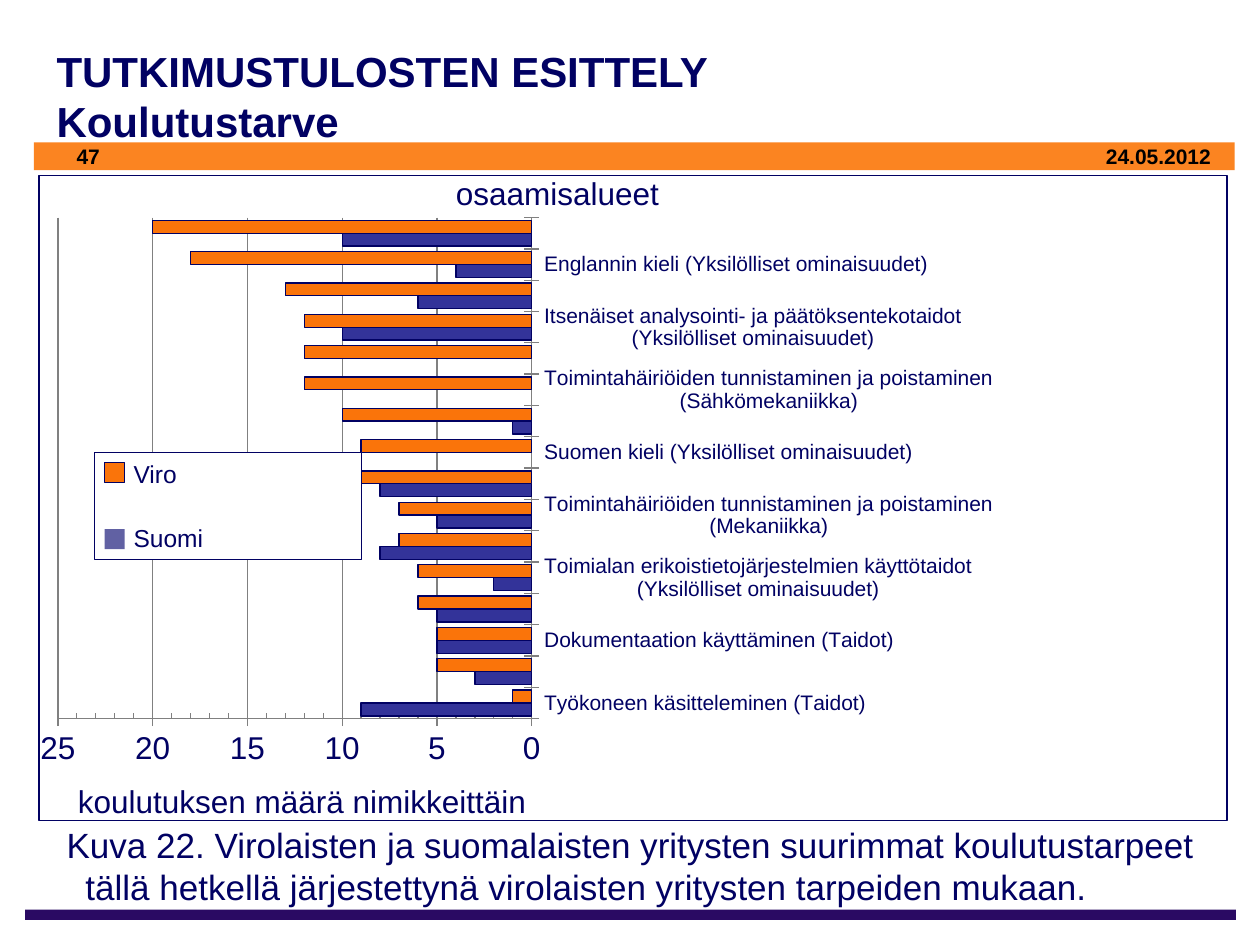
from dataclasses import dataclass
from lxml.etree import SubElement
from pptx import Presentation
from pptx.chart.data import CategoryChartData
from pptx.dml.color import RGBColor
from pptx.enum.chart import XL_CHART_TYPE, XL_TICK_MARK
from pptx.enum.shapes import MSO_SHAPE
from pptx.enum.text import MSO_ANCHOR, PP_ALIGN
from pptx.oxml.ns import qn
from pptx.util import Inches, Pt


@dataclass(frozen=True)
class Theme:
    font: str = "Arial"
    navy: RGBColor = RGBColor(0x01, 0x01, 0x63)
    purple: RGBColor = RGBColor(0x2A, 0x0A, 0x63)
    band: RGBColor = RGBColor(0xFB, 0x84, 0x21)
    orange: RGBColor = RGBColor(0xFA, 0x74, 0x0A)
    blue: RGBColor = RGBColor(0x33, 0x33, 0x99)
    lilac: RGBColor = RGBColor(0x61, 0x61, 0xA3)
    grey: RGBColor = RGBColor(0x80, 0x80, 0x80)
    white: RGBColor = RGBColor(0xFF, 0xFF, 0xFF)
    black: RGBColor = RGBColor(0, 0, 0)
    title: int = 24
    caption: int = 20
    axis: int = 18
    legend: int = 14
    small: int = 12
    line: float = 0.75


T = Theme()

NEEDS = [
    ("Työkoneen käsitteleminen (Taidot)", 9, 1),
    ("", 3, 5),
    ("Dokumentaation käyttäminen (Taidot)", 5, 5),
    ("", 5, 6),
    ("Toimialan erikoistietojärjestelmien käyttötaidot (Yksilölliset ominaisuudet)", 2, 6),
    ("", 8, 7),
    ("Toimintahäiriöiden tunnistaminen ja poistaminen (Mekaniikka)", 5, 7),
    ("", 8, 9),
    ("Suomen kieli (Yksilölliset ominaisuudet)", None, 9),
    ("", 1, 10),
    ("Toimintahäiriöiden tunnistaminen ja poistaminen (Sähkömekaniikka)", None, 12),
    ("", None, 12),
    ("Itsenäiset analysointi- ja päätöksentekotaidot (Yksilölliset ominaisuudet)", 10, 12),
    ("", 6, 13),
    ("Englannin kieli (Yksilölliset ominaisuudet)", 4, 18),
    ("", 10, 20),
]


def add_rect(s, x, y, w, h, fill=None, line=None):
    sp = s.shapes.add_shape(MSO_SHAPE.RECTANGLE, Inches(x), Inches(y), Inches(w), Inches(h))
    sp.shadow.inherit = False
    if fill is None:
        sp.fill.background()
    else:
        sp.fill.solid()
        sp.fill.fore_color.rgb = fill
    if line is None:
        sp.line.fill.background()
    else:
        sp.line.color.rgb = line
        sp.line.width = Pt(T.line)
    return sp


def style_text(p, size, color=T.navy, bold=False):
    p.font.name = T.font
    p.font.size = Pt(size)
    p.font.bold = bold
    p.font.color.rgb = color


def add_text(s, x, y, w, h, text, size, color=T.navy, bold=False,
             anchor=MSO_ANCHOR.TOP, align=PP_ALIGN.LEFT, hang=0):
    tf = s.shapes.add_textbox(Inches(x), Inches(y), Inches(w), Inches(h)).text_frame
    tf.word_wrap = True
    tf.vertical_anchor = anchor
    p = tf.paragraphs[0]
    p.text = text
    p.alignment = align
    if hang:
        pPr = p._p.get_or_add_pPr()
        pPr.set("marL", str(Inches(hang)))
        pPr.set("indent", str(-Inches(hang)))
    style_text(p, size, color, bold)


def add_header(s, x, y, w, h):
    add_rect(s, x, y + 0.92, w, 0.22, T.band)
    add_text(s, x + 0.08, y, w - 0.08, h, "TUTKIMUSTULOSTEN ESITTELY\vKoulutustarve",
             T.title, bold=True, anchor=MSO_ANCHOR.MIDDLE)
    add_text(s, x + 0.24, y + 0.88, 2.33, 0.3, "47", T.small, T.black, True)
    add_text(s, x + w - 1.29, y + 0.88, 1.2, 0.3, "24.05.2012", T.small, T.black, True,
             align=PP_ALIGN.RIGHT)


def set_plot_area(chart, x, y, w, h):
    area = chart._chartSpace.chart.plotArea
    layout = area.find(qn("c:layout"))
    if layout is None:
        layout = SubElement(area, qn("c:layout"))
        area.insert(0, layout)
    manual = SubElement(layout, qn("c:manualLayout"))
    for tag, val in (("layoutTarget", "inner"), ("xMode", "edge"), ("yMode", "edge"),
                     ("x", x), ("y", y), ("w", w), ("h", h)):
        SubElement(manual, qn(f"c:{tag}")).set("val", str(val))


def style_axis(axis, size):
    axis.major_tick_mark = XL_TICK_MARK.CROSS
    axis.format.line.color.rgb = T.grey
    axis.tick_labels.font.size = Pt(size)
    axis.tick_labels.font.color.rgb = T.navy


def add_needs_chart(s, x, y, w, h):
    names, suomi, viro = zip(*NEEDS)
    data = CategoryChartData()
    data.categories = names
    data.add_series("Suomi", suomi)
    data.add_series("Viro", viro)
    chart = s.shapes.add_chart(XL_CHART_TYPE.BAR_CLUSTERED, Inches(x), Inches(y),
                               Inches(w), Inches(h), data).chart
    chart.has_legend = False
    chart.has_title = False
    chart.font.name = T.font
    chart.font.size = Pt(T.axis)
    set_plot_area(chart, 0.024, 0.027, 0.393, 0.783)

    plot = chart.plots[0]
    plot.gap_width = 43
    plot.vary_by_categories = False
    for series, color in zip(plot.series, (T.blue, T.orange)):
        series.format.fill.solid()
        series.format.fill.fore_color.rgb = color
        series.format.line.color.rgb = T.navy
        series.format.line.width = Pt(T.line)

    cat, val = chart.category_axis, chart.value_axis
    style_axis(cat, T.small)
    style_axis(val, T.axis)
    skip = SubElement(cat._element, qn("c:tickLblSkip"))
    skip.set("val", "2")
    cat._element.find(qn("c:noMultiLvlLbl")).addprevious(skip)
    val.reverse_order = True
    val.minimum_scale, val.maximum_scale = 0, 25
    val.major_unit, val.minor_unit = 5, 1
    val.minor_tick_mark = XL_TICK_MARK.INSIDE
    val.has_major_gridlines = True
    val.major_gridlines.format.line.color.rgb = T.grey


def add_legend(s, x, y, w, h):
    tf = add_rect(s, x, y, w, h, T.white, T.navy).text_frame
    tf.vertical_anchor = MSO_ANCHOR.TOP
    tf.margin_left = Inches(0.31)
    tf.text = "Viro\nSuomi"
    for p in tf.paragraphs:
        p.alignment = PP_ALIGN.LEFT
        style_text(p, T.legend)
    tf.paragraphs[1].space_before = Pt(20)
    add_rect(s, x + 0.08, y + 0.08, 0.16, 0.16, T.orange, T.navy)
    add_rect(s, x + 0.08, y + 0.61, 0.16, 0.16, T.lilac)


def add_figure(s, x, y, w, h):
    add_needs_chart(s, x - 0.08, y + 0.2, w + 0.14, h - 0.04)
    add_rect(s, x, y, w, h, line=T.navy)
    add_text(s, x + 3.21, y - 0.06, 2.44, 0.4, "osaamisalueet", T.axis)
    add_text(s, x + 0.21, y + 4.77, 4.24, 0.4, "koulutuksen määrä nimikkeittäin", T.axis)
    add_legend(s, x + 0.44, y + 2.2, 2.12, 0.85)


def add_footer(s, x, y, w, h):
    add_rect(s, x, y + h - 0.08, w, 0.08, T.purple)
    add_text(s, x + 0.23, y, w - 0.23, h - 0.04,
             "Kuva 22. Virolaisten ja suomalaisten yritysten suurimmat koulutustarpeet\v"
             "tällä hetkellä järjestettynä virolaisten yritysten tarpeiden mukaan.",
             T.caption, hang=0.15)


def main():
    prs = Presentation()
    prs.slide_width, prs.slide_height = Inches(10), Inches(7.5)
    s = prs.slides.add_slide(prs.slide_layouts[6])
    add_header(s, 0.27, 0.21, 9.53, 1.1)
    add_figure(s, 0.31, 1.39, 9.43, 5.12)
    add_footer(s, 0.2, 6.49, 9.61, 0.81)
    prs.save("out.pptx")


if __name__ == "__main__":
    main()
